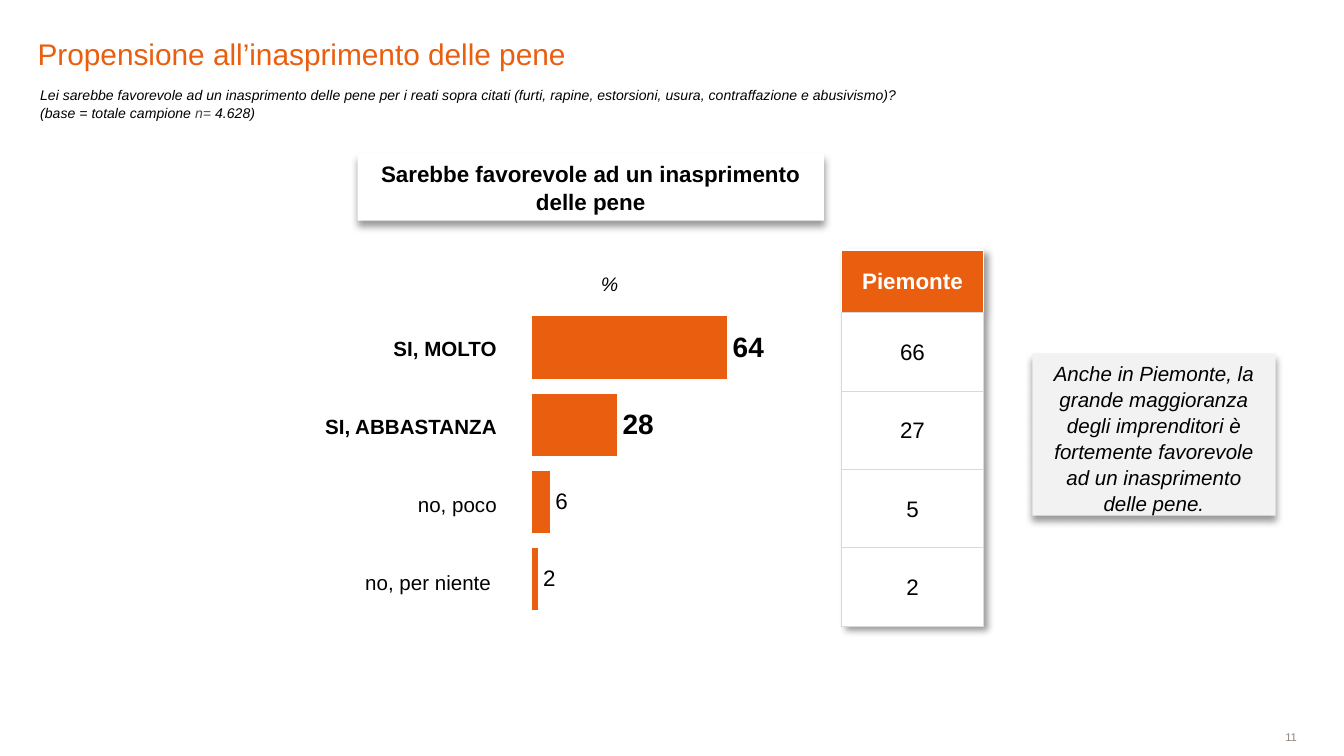
from dataclasses import dataclass

from lxml import etree
from pptx import Presentation
from pptx.chart.data import CategoryChartData
from pptx.dml.color import RGBColor
from pptx.enum.chart import XL_CHART_TYPE as Chart, XL_LABEL_POSITION as LabelPos
from pptx.enum.shapes import MSO_SHAPE as Shape
from pptx.enum.text import MSO_ANCHOR as Anchor, PP_ALIGN as Align
from pptx.oxml import parse_xml
from pptx.oxml.ns import nsdecls, qn
from pptx.util import Cm, Pt

COLORS = {"orange": "E95E0F", "black": "000000", "white": "FFFFFF", "panel": "F2F2F2",
          "rule": "D9D9D9", "number": "928580", "base": "4A423F"}
FONT = "Arial"
ROW_H = 1.48


@dataclass
class TextStyle:
    size: float
    color: str = "black"
    bold: bool = False
    italic: bool = False
    align: Align = Align.LEFT


@dataclass
class Row:
    text: str
    style: TextStyle
    height: float = ROW_H
    fill: str = ""
    borders: tuple = (("white", 1),) * 4
    tight: bool = True


@dataclass
class Panel:
    text: str
    box: tuple
    fill: str
    style: TextStyle
    anchor: Anchor


def rgb(name: str) -> RGBColor:
    return RGBColor.from_string(COLORS[name])


def place(box: tuple) -> list:
    return [Cm(v) for v in box]


def set_font(font, style: TextStyle) -> None:
    font.name, font.size = FONT, Pt(style.size)
    font.bold, font.italic = style.bold, style.italic
    font.color.rgb = rgb(style.color)


def write(tf, lines: list, style: TextStyle, anchor: Anchor = Anchor.TOP,
          inset: bool = True, spacing: float = 1.05) -> None:
    tf.word_wrap = True
    tf.vertical_anchor = anchor
    if not inset:
        tf.margin_left = tf.margin_right = tf.margin_top = tf.margin_bottom = 0
    for i, line in enumerate(lines):
        p = tf.paragraphs[0] if i == 0 else tf.add_paragraph()
        p.alignment, p.line_spacing = style.align, spacing
        for text in line if isinstance(line, list) else [line]:
            p.add_run().text = text
        set_font(p.font, style)


def add_text(slide, box: tuple, lines: list, style: TextStyle, **options):
    sp = slide.shapes.add_textbox(*place(box))
    write(sp.text_frame, lines, style, **options)
    return sp


def add_shadow(parent, angle: int, index: int | None = None) -> None:
    effect = parse_xml(
        f'<a:effectLst {nsdecls("a")}><a:outerShdw blurRad="{Pt(4)}" dist="{Pt(3)}" '
        f'dir="{angle * 60000}" algn="ctr" rotWithShape="0"><a:srgbClr val="{COLORS["black"]}">'
        '<a:alpha val="40000"/></a:srgbClr></a:outerShdw></a:effectLst>')
    parent.insert(len(parent) if index is None else index, effect)


def add_panel(slide, panel: Panel) -> None:
    sp = slide.shapes.add_shape(Shape.RECTANGLE, *place(panel.box))
    sp.fill.solid()
    sp.fill.fore_color.rgb = rgb(panel.fill)
    sp.line.fill.background()
    add_shadow(sp._element.spPr, 90)
    write(sp.text_frame, [panel.text], panel.style, panel.anchor)


def add_column(slide, left: float, top: float, width: float, rows: list[Row]):
    height = sum(row.height for row in rows)
    table = slide.shapes.add_table(len(rows), 1, *place((left, top, width, height))).table
    table.first_row = table.horz_banding = False
    for i, row in enumerate(rows):
        table.rows[i].height = Cm(row.height)
        cell = table.cell(i, 0)
        tc_pr = cell._tc.get_or_add_tcPr()
        for side, (color, weight) in zip("LRTB", row.borders):
            tc_pr.append(parse_xml(
                f'<a:ln{side} {nsdecls("a")} w="{Pt(weight)}"><a:solidFill>'
                f'<a:srgbClr val="{COLORS[color]}"/></a:solidFill></a:ln{side}>'))
        if row.fill:
            cell.fill.solid()
            cell.fill.fore_color.rgb = rgb(row.fill)
        else:
            cell.fill.background()
        if row.tight:
            cell.margin_left = cell.margin_right = cell.margin_top = Cm(0.03)
            cell.margin_bottom = 0
        cell.vertical_anchor = Anchor.MIDDLE
        p = cell.text_frame.paragraphs[0]
        p.alignment = row.style.align
        p.add_run().text = row.text
        set_font(p.font, row.style)
    return table


def add_bars(slide, box: tuple, values: list[int]) -> None:
    data = CategoryChartData(number_format="0")
    data.categories = [str(i + 1) for i in range(len(values))]
    data.add_series("Series 1", values)
    chart = slide.shapes.add_chart(Chart.BAR_CLUSTERED, *place(box), data).chart
    chart.has_legend = chart.has_title = False
    set_font(chart.font, TextStyle(13.5))
    chart.category_axis.reverse_order = True
    chart.category_axis.visible = False
    axis = chart.value_axis
    axis.minimum_scale, axis.maximum_scale, axis.major_unit = 0, 100, 10
    axis.has_major_gridlines = axis.visible = False
    plot = chart.plots[0]
    plot.gap_width, plot.vary_by_categories = 24, False
    series = plot.series[0]
    series.format.fill.solid()
    series.format.fill.fore_color.rgb = rgb("orange")
    labels = series.data_labels
    labels.show_value, labels.position = True, LabelPos.OUTSIDE_END
    labels.number_format, labels.number_format_is_linked = "0", False
    set_font(labels.font, TextStyle(12))
    for i in range(2):
        label = series.points[i].data_label
        set_font(label.font, TextStyle(15, bold=True))
        label.position = LabelPos.OUTSIDE_END
    area = chart._chartSpace.chart.plotArea
    for old in area.findall(qn("c:layout")):
        area.remove(old)
    layout = etree.Element(qn("c:layout"))
    manual = etree.SubElement(layout, qn("c:manualLayout"))
    for tag, value in (("layoutTarget", "inner"), ("xMode", "edge"), ("yMode", "edge"),
                       ("x", 0.282), ("y", 0), ("w", 0.496), ("h", 0.721)):
        etree.SubElement(manual, qn(f"c:{tag}")).set("val", str(value))
    area.insert(0, layout)


def main() -> None:
    prs = Presentation()
    prs.slide_width, prs.slide_height = Cm(25.4), Cm(14.29)
    slide = prs.slides.add_slide(prs.slide_layouts[5])

    title = slide.shapes.title
    title.left, title.top, title.width, title.height = place((0.71, 0.41, 20.8, 0.94))
    write(title.text_frame, ["Propensione all’inasprimento delle pene"],
          TextStyle(16, "orange"), Anchor.BOTTOM, inset=False, spacing=1)

    question = add_text(slide, (0.51, 1.5, 17.7, 0.89), [
        "Lei sarebbe favorevole ad un inasprimento delle pene per i reati sopra citati "
        "(furti, rapine, estorsioni, usura, contraffazione e abusivismo)?",
        ["(base = totale campione", " n=", " 4.628)"]], TextStyle(7.5, italic=True))
    question.text_frame.paragraphs[1].runs[1].font.color.rgb = rgb("base")

    for panel in (
        Panel("Sarebbe favorevole ad un inasprimento delle pene", (6.76, 2.9, 8.81, 1.27),
              "white", TextStyle(12, bold=True, align=Align.CENTER), Anchor.MIDDLE),
        Panel("Anche in Piemonte, la grande maggioranza degli imprenditori è fortemente "
              "favorevole ad un inasprimento delle pene.", (19.51, 6.68, 4.6, 3.07),
              "panel", TextStyle(11, italic=True, align=Align.CENTER), Anchor.TOP),
    ):
        add_panel(slide, panel)

    add_bars(slide, (6.76, 5.84, 11.66, 8.1), [64, 28, 6, 2])

    strong, plain = (TextStyle(11, bold=b, align=Align.RIGHT) for b in (True, False))
    add_column(slide, 5.69, 5.84, 3.73, [
        Row("SI, MOLTO", strong), Row("SI, ABBASTANZA", strong),
        Row("no, poco", plain), Row("no, per niente ", plain)])
    add_text(slide, (11.15, 5.13, 0.74, 0.46), ["%"],
             TextStyle(10.5, italic=True, align=Align.CENTER), anchor=Anchor.MIDDLE, inset=False)

    rule = ("rule", 0.25)
    header = Row("Piemonte", TextStyle(12, "white", bold=True, align=Align.CENTER), 1.19,
                 "orange", (("white", 1),) * 3 + (rule,), tight=False)
    piemonte = add_column(slide, 15.9, 4.72, 2.69, [header] + [
        Row(str(v), TextStyle(12, align=Align.CENTER), fill="white", borders=(rule,) * 4)
        for v in (66, 27, 5, 2)])
    add_shadow(piemonte._tbl.tblPr, 45, 0)

    add_text(slide, (21.11, 13.82, 3.4, 0.23), ["11"],
             TextStyle(6, "number", align=Align.RIGHT), anchor=Anchor.MIDDLE, inset=False)
    prs.save("out.pptx")


if __name__ == "__main__":
    main()
